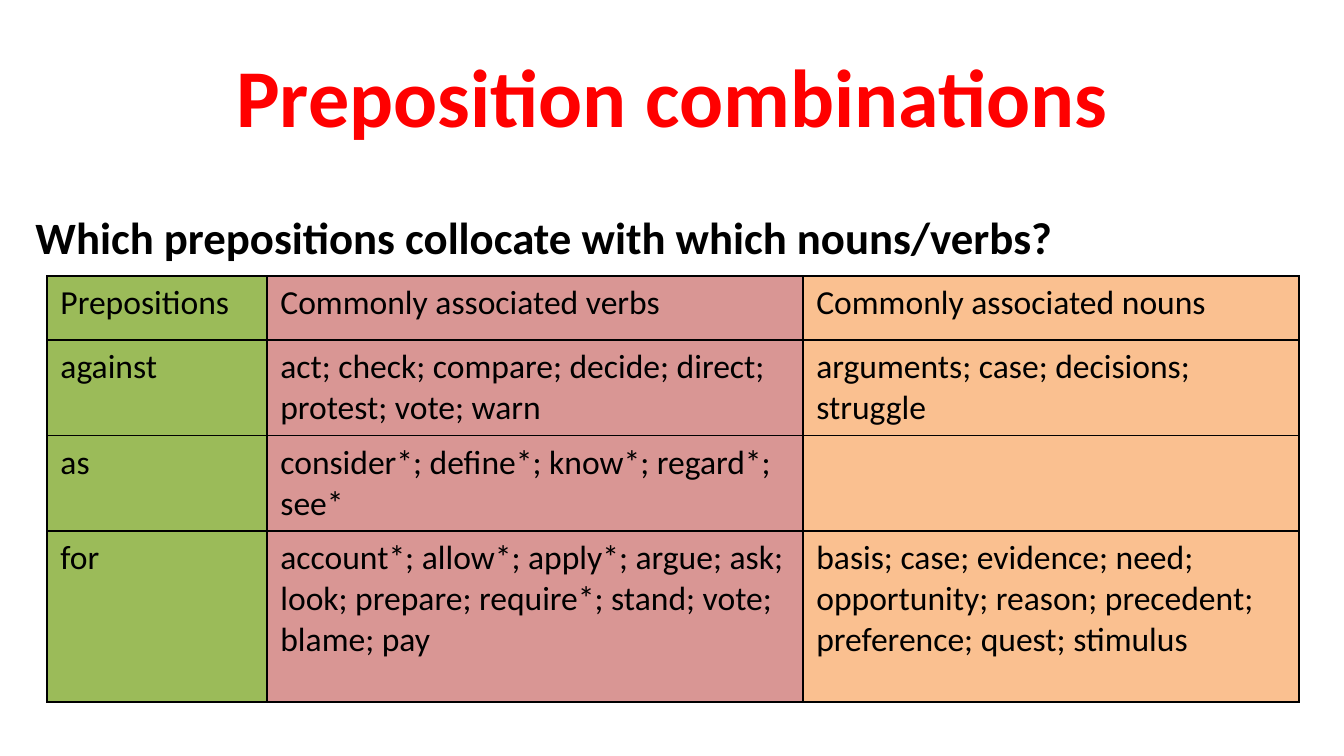
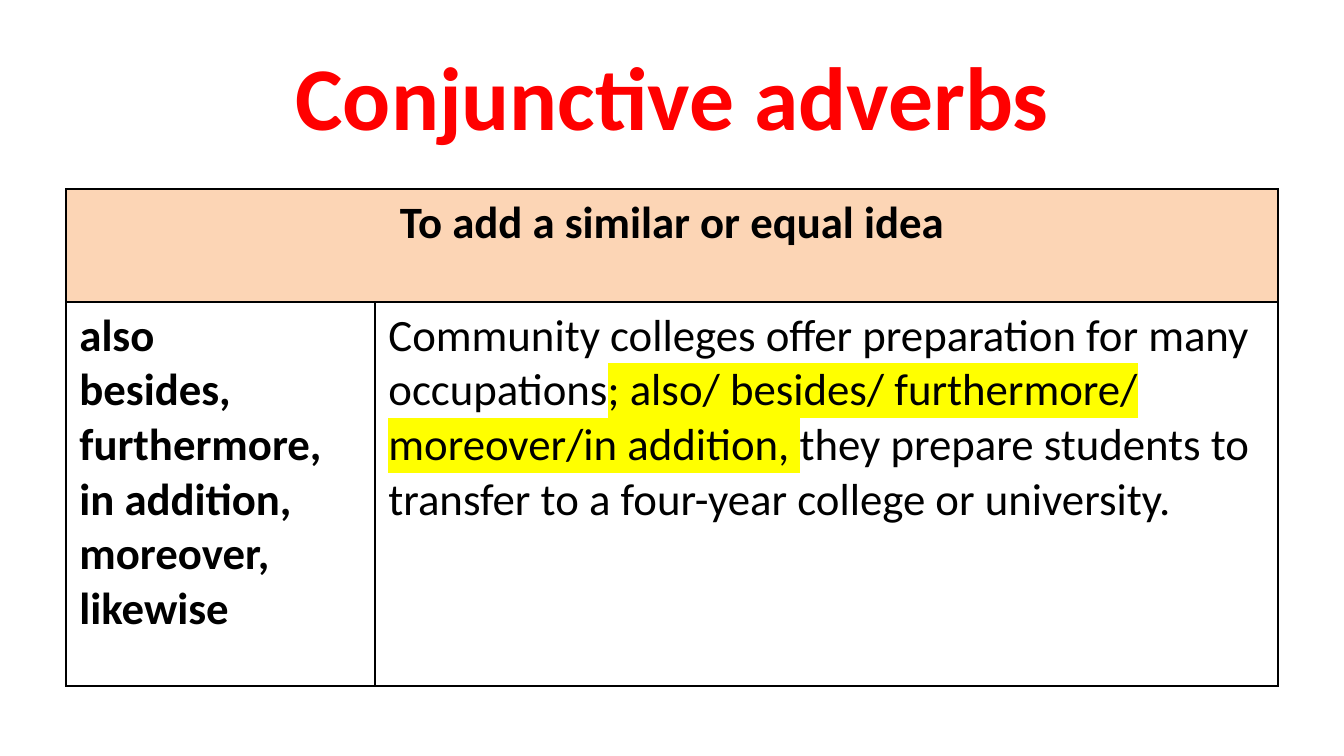
from lxml import etree
from pptx import Presentation
from pptx import util as u
from pptx.dml.color import RGBColor
from pptx.enum import text
from pptx.oxml import ns

COLORS = {
    "title": "FF0000",
    "ink": "000000",
    "green": "9BBB59",
    "rose": "D99694",
    "orange": "FAC090",
    "peach": "FCD5B5",
    "mark": "FFFF00",
}
FONT = "Calibri"
PX = u.Inches(10) / 1344
TITLE_BOX = (66, 38, 1213, 113)

QUESTION = "Which prepositions collocate with which nouns/verbs?"
QUESTION_BOX = (22, 176, 1304, 559)
PREPOSITIONS = [
    ["Prepositions", "Commonly associated verbs", "Commonly associated nouns"],
    ["against", "act; check; compare; decide; direct; protest; vote; warn",
     ["arguments; case; decisions;", "struggle"]],
    ["as", "consider*; define*; know*; regard*; see*", ""],
    ["for", "account*; allow*; apply*; argue; ask; look; prepare; require*; stand; vote; blame; pay",
     ["basis; case; evidence; need;",
      "opportunity; reason; precedent; preference; quest; stimulus"]],
]
COLUMN_FILLS = ["green", "rose", "orange"]

HEADING = "To add a similar or equal idea"
ADVERBS = ["also", "besides, furthermore,", "in addition, moreover,", "likewise"]
EXAMPLE = [[
    ("Community colleges offer preparation for many occupations", None),
    ("; also/ besides/ furthermore/ moreover/in addition, ", "mark"),
    ("they prepare students to transfer to a four-year college or university.", None),
]]


def px(*values):
    return [u.Emu(round(v * PX)) for v in values]


def sub(parent, tag, **attrs):
    return etree.SubElement(parent, ns.qn(tag), attrs)


def write(tf, content, size, color="ink", bold=False, align=text.PP_ALIGN.LEFT,
          spacing=None, plain=False):
    lines = [content] if isinstance(content, str) else content
    for i, line in enumerate(lines):
        p = tf.paragraphs[0] if i == 0 else tf.add_paragraph()
        if plain:
            pPr = p._p.get_or_add_pPr()
            pPr.set("marL", "0")
            pPr.set("indent", "0")
            sub(pPr, "a:buNone")
            p.space_before = u.Pt(0)
        p.alignment = align
        if spacing:
            p.line_spacing = spacing
        for words, mark in [(line, None)] if isinstance(line, str) else line:
            r = p.add_run()
            r.text = words
            r.font.size = u.Pt(size)
            r.font.bold = bold
            r.font.color.rgb = RGBColor.from_string(COLORS[color])
            r.font.name = FONT
            if mark:
                highlight = etree.Element(ns.qn("a:highlight"))
                sub(highlight, "a:srgbClr", val=COLORS[mark])
                r._r.rPr.find(ns.qn("a:solidFill")).addnext(highlight)


def fill_placeholder(sp, box, content, size, anchor, **fmt):
    sp.left, sp.top, sp.width, sp.height = px(*box)
    tf = sp.text_frame
    tf.word_wrap = True
    tf.auto_size = text.MSO_AUTO_SIZE.NONE
    tf.vertical_anchor = anchor
    write(tf, content, size, bold=True, **fmt)


def add_slide(prs, layout, title, size):
    s = prs.slides.add_slide(prs.slide_layouts[layout])
    fill_placeholder(s.shapes.title, TITLE_BOX, title, size, text.MSO_ANCHOR.MIDDLE,
                     color="title", align=text.PP_ALIGN.CENTER)
    return s


def add_grid(s, left, top, cols, rows):
    box = px(left, top, sum(cols), sum(rows))
    table = s.shapes.add_table(len(rows), len(cols), *box).table
    table.first_row = table.horz_banding = False
    for column, width in zip(table.columns, px(*cols)):
        column.width = width
    for row, height in zip(table.rows, px(*rows)):
        row.height = height
    for cell in table.iter_cells():
        tcPr = cell._tc.get_or_add_tcPr()
        for side in "LRTB":
            ln = sub(tcPr, f"a:ln{side}", w=str(u.Pt(1)))
            sub(sub(ln, "a:solidFill"), "a:srgbClr", val=COLORS["ink"])
        cell.fill.background()
    return table


def paint(cell, color):
    cell.fill.solid()
    cell.fill.fore_color.rgb = RGBColor.from_string(COLORS[color])


def prepositions_slide(prs):
    s = add_slide(prs, 1, "Preposition combinations", 44)
    fill_placeholder(s.placeholders[1], QUESTION_BOX, QUESTION, 24,
                     text.MSO_ANCHOR.TOP, spacing=1.5, plain=True)
    table = add_grid(s, 47, 276, [220, 536, 496], [64, 95, 95, 171])
    for i, row in enumerate(PREPOSITIONS):
        for j, (content, color) in enumerate(zip(row, COLUMN_FILLS)):
            cell = table.cell(i, j)
            paint(cell, color)
            if content:
                write(cell.text_frame, content, 18)


def adverbs_slide(prs):
    s = add_slide(prs, 5, "Conjunctive adverbs", 48)
    table = add_grid(s, 66, 189, [309, 903], [113, 384])
    heading = table.cell(0, 0)
    heading.merge(table.cell(0, 1))
    paint(heading, "peach")
    write(heading.text_frame, HEADING, 24, bold=True, align=text.PP_ALIGN.CENTER)
    write(table.cell(1, 0).text_frame, ADVERBS, 24, bold=True)
    write(table.cell(1, 1).text_frame, EXAMPLE, 24)


def main():
    prs = Presentation()
    prs.slide_width, prs.slide_height = px(1344, 756)
    prepositions_slide(prs)
    adverbs_slide(prs)
    prs.save("out.pptx")


if __name__ == "__main__":
    main()
